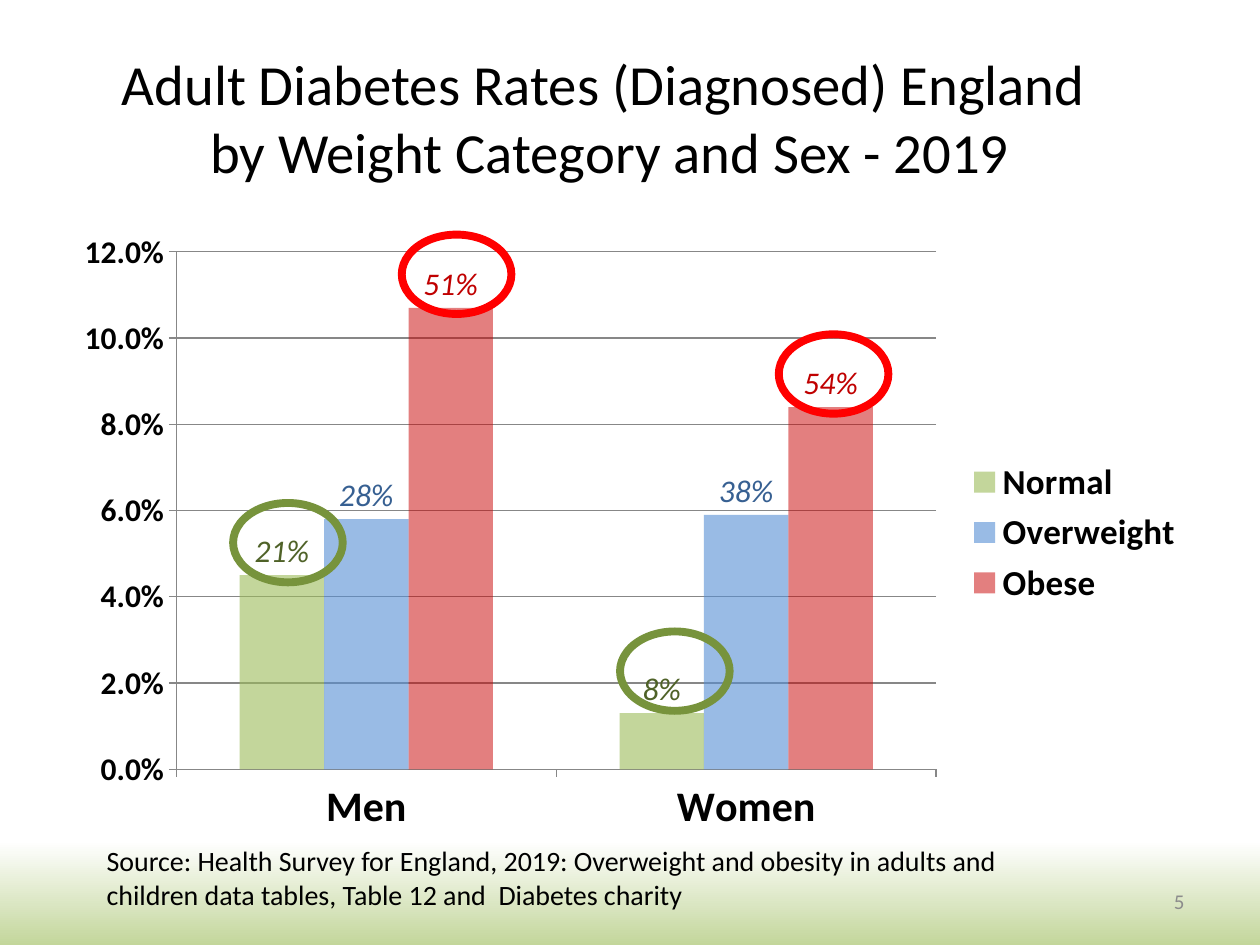
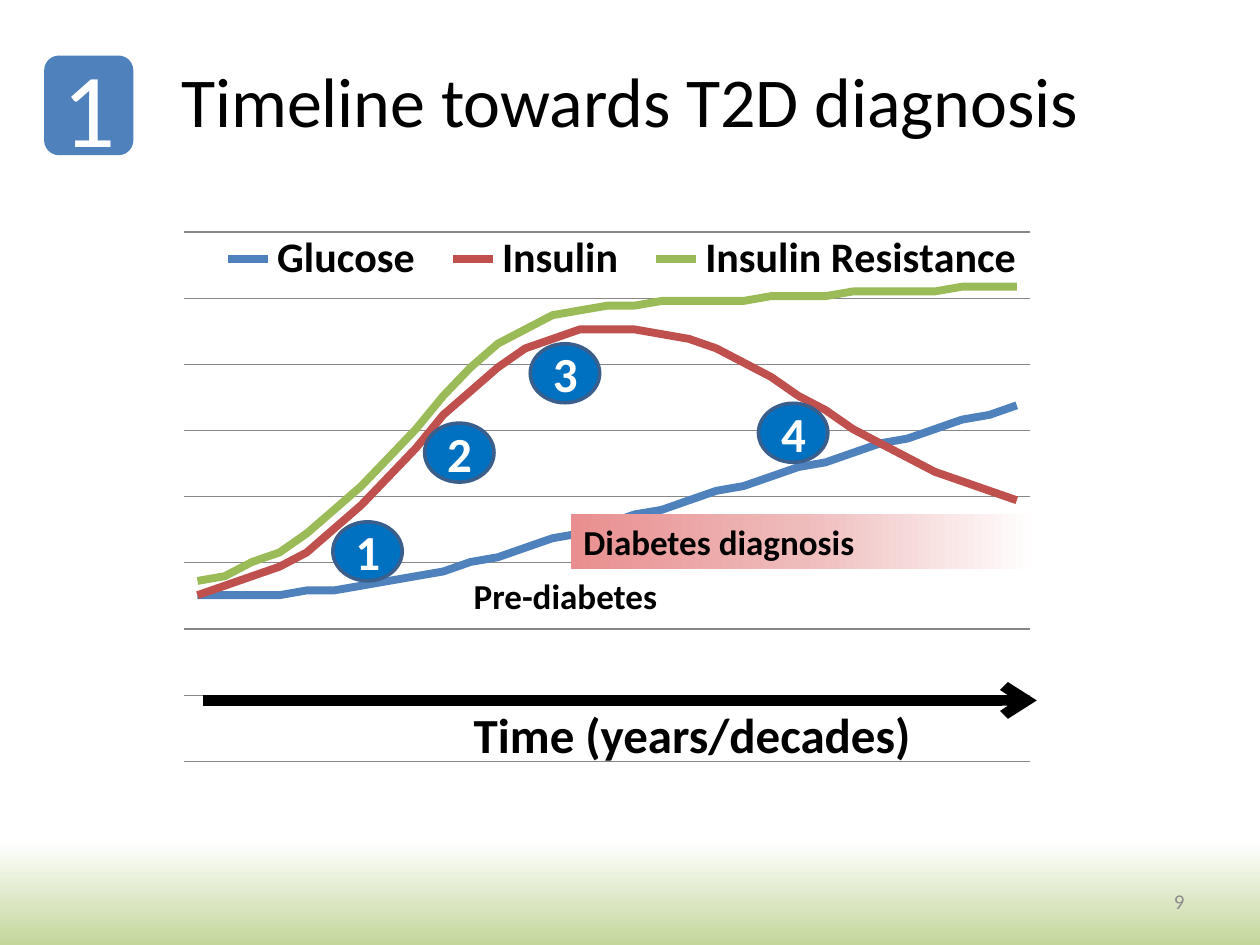
from dataclasses import dataclass

from lxml.etree import SubElement
from pptx import Presentation
from pptx.chart.data import CategoryChartData
from pptx.dml.color import RGBColor
from pptx.enum.chart import (XL_CHART_TYPE, XL_LABEL_POSITION,
                             XL_LEGEND_POSITION, XL_TICK_MARK)
from pptx.enum.shapes import MSO_CONNECTOR, MSO_SHAPE
from pptx.enum.text import MSO_ANCHOR, PP_ALIGN
from pptx.oxml import parse_xml
from pptx.oxml.ns import nsdecls, qn
from pptx.util import Cm, Pt


@dataclass(frozen=True)
class Theme:
    font: str = "Calibri"
    black: str = "000000"
    white: str = "FFFFFF"
    grey: str = "8C8C8C"
    grid: str = "878787"
    blue: str = "4F81BD"
    red: str = "C0504D"
    green: str = "9BBB59"
    low_ring: str = "77933C"
    high_ring: str = "FF0000"
    stage: str = "0070C0"
    stage_edge: str = "3A5F8C"
    backdrop: tuple = ((0, "FFFFFF"), (89, "FFFFFF"), (100, "C3D69B"))
    diagnosis: tuple = ((0, "E98F8F"), (50, "EFBCBC"), (100, "FFFFFF"))
    number_size: float = 12
    source_size: float = 16
    label_size: float = 18
    note_size: float = 20
    axis_size: float = 24
    stage_size: float = 28
    long_title_size: float = 32.4
    title_size: float = 40
    badge_size: float = 60


@dataclass(frozen=True)
class Box:
    """A region in centimetres."""
    left: float
    top: float
    width: float
    height: float

    def inside(self, left, top, width, height):
        return Box(self.left + left, self.top + top, width, height)

    def lengths(self):
        return [Cm(v) for v in (self.left, self.top, self.width, self.height)]


THEME = Theme()
NUMBER_BOX = Box(18.21, 17.65, 5.92, 1.02)

# name, bar colour, opacity, label colour, rates, label texts
WEIGHT_GROUPS = [
    ("Normal", "9BBB59", 60, "4F6228", (0.045, 0.013), ("21%", "8%")),
    ("Overweight", "558ED5", 60, "376092", (0.058, 0.059), ("28%", "38%")),
    ("Obese", "C80000", 50, "C00000", (0.107, 0.084), ("51%", "54%")),
]
RATE_RINGS = [
    (3.43, 5.69, THEME.low_ring), (11.23, 8.28, THEME.low_ring),
    (6.83, 0.28, THEME.high_ring), (14.43, 2.29, THEME.high_ring),
]
MARKERS = [
    ("Glucose", THEME.blue,
     (35, 35, 35, 35, 36, 36, 37, 38, 39, 40, 42, 43, 45, 47, 48, 50, 52, 53,
      55, 57, 58, 60, 62, 63, 65, 67, 68, 70, 72, 73, 75)),
    ("Insulin", THEME.red,
     (35, 37, 39, 41, 44, 49, 54, 60, 66, 73, 78, 83, 87, 89, 91, 91, 91, 90,
      89, 87, 84, 81, 77, 74, 70, 67, 64, 61, 59, 57, 55)),
    ("Insulin Resistance", THEME.green,
     (38, 39, 42, 44, 48, 53, 58, 64, 70, 77, 83, 88, 91, 94, 95, 96, 96, 97,
      97, 97, 97, 98, 98, 98, 99, 99, 99, 99, 100, 100, 100)),
]
STAGES = [(3.41, 6.2), (5.26, 4.21), (7.39, 2.61), (11.99, 3.81)]


def rgb(color):
    return RGBColor.from_string(color)


def set_font(font, size, color=THEME.black, bold=False, italic=False):
    font.name, font.size = THEME.font, Pt(size)
    font.bold, font.italic = bold, italic
    font.color.rgb = rgb(color)


def write(frame, text, *, size, color=THEME.black, bold=False, italic=False,
          align=PP_ALIGN.LEFT, anchor=MSO_ANCHOR.TOP):
    frame.word_wrap = True
    frame.vertical_anchor = anchor
    paragraph = frame.paragraphs[0]
    paragraph.text = text
    paragraph.alignment = align
    for run in paragraph.runs:
        set_font(run.font, size, color, bold, italic)


def add_text(slide, box, text, **style):
    write(slide.shapes.add_textbox(*box.lengths()).text_frame, text, **style)


def add_shape(slide, kind, box, fill=None, line=None, line_width=0):
    shape = slide.shapes.add_shape(kind, *box.lengths())
    shape.shadow.inherit = False
    if fill:
        shape.fill.solid()
        shape.fill.fore_color.rgb = rgb(fill)
    else:
        shape.fill.background()
    if line:
        shape.line.color.rgb = rgb(line)
        shape.line.width = Pt(line_width)
    else:
        shape.line.fill.background()
    return shape


def apply_gradient(fill, properties, stops, angle):
    """Put a linear gradient where the solid fill of the properties stands."""
    fill.solid()
    marks = "".join(f'<a:gs pos="{pos * 1000}"><a:srgbClr val="{color}"/></a:gs>'
                    for pos, color in stops)
    gradient = parse_xml(
        f'<a:gradFill {nsdecls("a")} rotWithShape="1"><a:gsLst>{marks}</a:gsLst>'
        f'<a:lin ang="{angle * 60000}" scaled="0"/></a:gradFill>')
    properties.replace(properties.find(qn("a:solidFill")), gradient)


def set_layout(parent, index, x, y, w, h, inner=False):
    """Fix a chart part at fractions of the chart's size."""
    old = parent.find(qn("c:layout"))
    if old is not None:
        parent.remove(old)
    target = '<c:layoutTarget val="inner"/>' if inner else ""
    parent.insert(index, parse_xml(
        f'<c:layout {nsdecls("c")}><c:manualLayout>{target}'
        '<c:xMode val="edge"/><c:yMode val="edge"/>'
        f'<c:x val="{x}"/><c:y val="{y}"/><c:w val="{w}"/><c:h val="{h}"/>'
        '</c:manualLayout></c:layout>'))


def add_chart(slide, box, kind, categories, series, *, number_format, plot_area,
              legend, legend_size, top, steps):
    data = CategoryChartData(number_format=number_format)
    data.categories = categories
    for name, values in series:
        data.add_series(name, values)
    chart = slide.shapes.add_chart(kind, *box.lengths(), data).chart
    chart.has_title = False
    set_font(chart.font, 10)
    chart.has_legend = True
    chart.legend.position = legend
    chart.legend.include_in_layout = False
    set_font(chart.legend.font, legend_size, bold=True)
    axis = chart.value_axis
    axis.minimum_scale, axis.maximum_scale = 0, top
    axis.major_unit = top / steps
    axis.major_gridlines.format.line.color.rgb = rgb(THEME.grid)
    chart.plots[0].vary_by_categories = False
    set_layout(chart.element.find(".//" + qn("c:plotArea"))
               if hasattr(chart, "element")
               else chart._chartSpace.find(".//" + qn("c:plotArea")),
               0, *plot_area, inner=True)
    return chart


def add_rates_chart(slide, box):
    chart = add_chart(
        slide, box, XL_CHART_TYPE.COLUMN_CLUSTERED, ["Men", "Women"],
        [(name, rates) for name, _, _, _, rates, _ in WEIGHT_GROUPS],
        number_format="0.0%", plot_area=(0.1, 0.05, 0.67, 0.83),
        legend=XL_LEGEND_POSITION.RIGHT, legend_size=THEME.note_size,
        top=0.12, steps=6)
    for axis, size in ((chart.category_axis, THEME.axis_size),
                       (chart.value_axis, THEME.label_size)):
        set_font(axis.tick_labels.font, size, bold=True)
        axis.major_tick_mark = XL_TICK_MARK.OUTSIDE
        axis.format.line.color.rgb = rgb(THEME.grid)
    chart.value_axis.tick_labels.number_format = "0.0%"
    chart.value_axis.tick_labels.number_format_is_linked = False
    plot = chart.plots[0]
    plot.gap_width, plot.overlap = 150, 0
    for bars, (_, color, opacity, label_color, _, shares) in zip(
            plot.series, WEIGHT_GROUPS):
        bars.format.fill.solid()
        bars.format.fill.fore_color.rgb = rgb(color)
        tint = bars._element.find(f"{qn('c:spPr')}//{qn('a:srgbClr')}")
        SubElement(tint, qn("a:alpha")).set("val", str(opacity * 1000))
        for index, share in enumerate(shares):
            label = bars.points[index].data_label
            paragraph = label.text_frame.paragraphs[0]
            paragraph.text = share
            set_font(paragraph.runs[0].font, THEME.label_size, label_color,
                     italic=True)
            label.position = XL_LABEL_POSITION.OUTSIDE_END


def add_rate_rings(slide, box):
    for left, top, color in RATE_RINGS:
        add_shape(slide, MSO_SHAPE.OVAL, box.inside(left, top, 2.21, 1.6),
                  line=color, line_width=4.5)


def add_timeline_chart(slide, box):
    chart = add_chart(
        slide, box, XL_CHART_TYPE.LINE, [str(n) for n in range(1, 32)],
        [(name, values) for name, _, values in MARKERS],
        number_format="0", plot_area=(0.02, 0.03, 0.84, 0.89),
        legend=XL_LEGEND_POSITION.TOP, legend_size=THEME.axis_size,
        top=111.5, steps=8)
    set_layout(chart.legend._element, 1, 0.04, 0.03, 0.83, 0.09)
    chart.category_axis.visible = chart.value_axis.visible = False
    for curve, (_, color, _) in zip(chart.plots[0].series, MARKERS):
        curve.smooth = False
        curve.format.line.color.rgb = rgb(color)
        curve.format.line.width = Pt(4.5)


def add_time_arrow(slide, box):
    y = Cm(box.top + 9.8)
    arrow = slide.shapes.add_connector(
        MSO_CONNECTOR.STRAIGHT, Cm(box.left + 0.79), y, Cm(box.left + 17.6), y)
    arrow.line.color.rgb = rgb(THEME.black)
    arrow.line.width = Pt(6)
    properties = arrow.element.spPr
    SubElement(properties.find(qn("a:ln")), qn("a:tailEnd")).set("type", "arrow")
    SubElement(properties, qn("a:effectLst"))
    add_text(slide, box.inside(6, 9.75, 10.21, 1.45), "Time (years/decades)",
             size=THEME.stage_size, bold=True)


def add_diagnosis_band(slide, box):
    band = add_shape(slide, MSO_SHAPE.RECTANGLE, box.inside(8.21, 6.04, 9.4, 1.12),
                     fill=THEME.white)
    apply_gradient(band.fill, band.element.spPr, THEME.diagnosis, 0)
    write(band.text_frame, "Diabetes diagnosis", size=THEME.note_size, bold=True)
    add_text(slide, box.inside(6, 7.14, 4.6, 1.12), "Pre-diabetes",
             size=THEME.note_size, bold=True)


def add_stages(slide, box):
    for number, (left, top) in enumerate(STAGES, start=1):
        stage = add_shape(slide, MSO_SHAPE.OVAL, box.inside(left, top, 1.4, 1.19),
                          fill=THEME.stage, line=THEME.stage_edge, line_width=2)
        write(stage.text_frame, str(number), size=THEME.stage_size, bold=True,
              color=THEME.white, align=PP_ALIGN.CENTER, anchor=MSO_ANCHOR.MIDDLE)


def add_badge(slide, box, text):
    badge = add_shape(slide, MSO_SHAPE.ROUNDED_RECTANGLE, box, fill=THEME.blue)
    write(badge.text_frame, text, size=THEME.badge_size, color=THEME.white,
          align=PP_ALIGN.CENTER, anchor=MSO_ANCHOR.MIDDLE)


def start_slide(deck, title, title_box, title_size, number):
    slide = deck.slides.add_slide(deck.slide_layouts[6])
    add_text(slide, title_box, title, size=title_size,
             align=PP_ALIGN.CENTER, anchor=MSO_ANCHOR.MIDDLE)
    add_text(slide, NUMBER_BOX, number, size=THEME.number_size, color=THEME.grey,
             align=PP_ALIGN.RIGHT, anchor=MSO_ANCHOR.MIDDLE)
    return slide


def build_rates_slide(deck):
    slide = start_slide(
        deck, "Adult Diabetes Rates (Diagnosed) England \v"
        "by Weight Category and Sex - 2019",
        Box(1.5, 0.76, 21.59, 3.18), THEME.long_title_size, "5")
    chart_box = Box(1.27, 4.45, 22.86, 12.57)
    add_rates_chart(slide, chart_box)
    add_text(slide, Box(1.9, 16.89, 20.19, 1.63),
             "Source: Health Survey for England, 2019: Overweight and obesity in "
             "adults and children data tables, Table 12 and  Diabetes charity",
             size=THEME.source_size)
    add_rate_rings(slide, chart_box)


def build_timeline_slide(deck):
    slide = start_slide(deck, "Timeline towards T2D diagnosis",
                        Box(1.27, 0.91, 22.86, 2.21), THEME.title_size, "9")
    chart_box = Box(3.3, 4.32, 20.32, 11.99)
    for add_part in (add_timeline_chart, add_diagnosis_band, add_time_arrow,
                     add_stages):
        add_part(slide, chart_box)
    add_badge(slide, Box(0.89, 1.12, 1.8, 2.01), "1")


def main():
    deck = Presentation()
    deck.slide_width, deck.slide_height = Cm(25.4), Cm(19.05)
    master = deck.slide_master
    backdrop = master.background.fill
    backdrop.solid()
    apply_gradient(backdrop, master.element.find(".//" + qn("p:bgPr")),
                   THEME.backdrop, 90)
    build_rates_slide(deck)
    build_timeline_slide(deck)
    deck.save("out.pptx")


if __name__ == "__main__":
    main()
